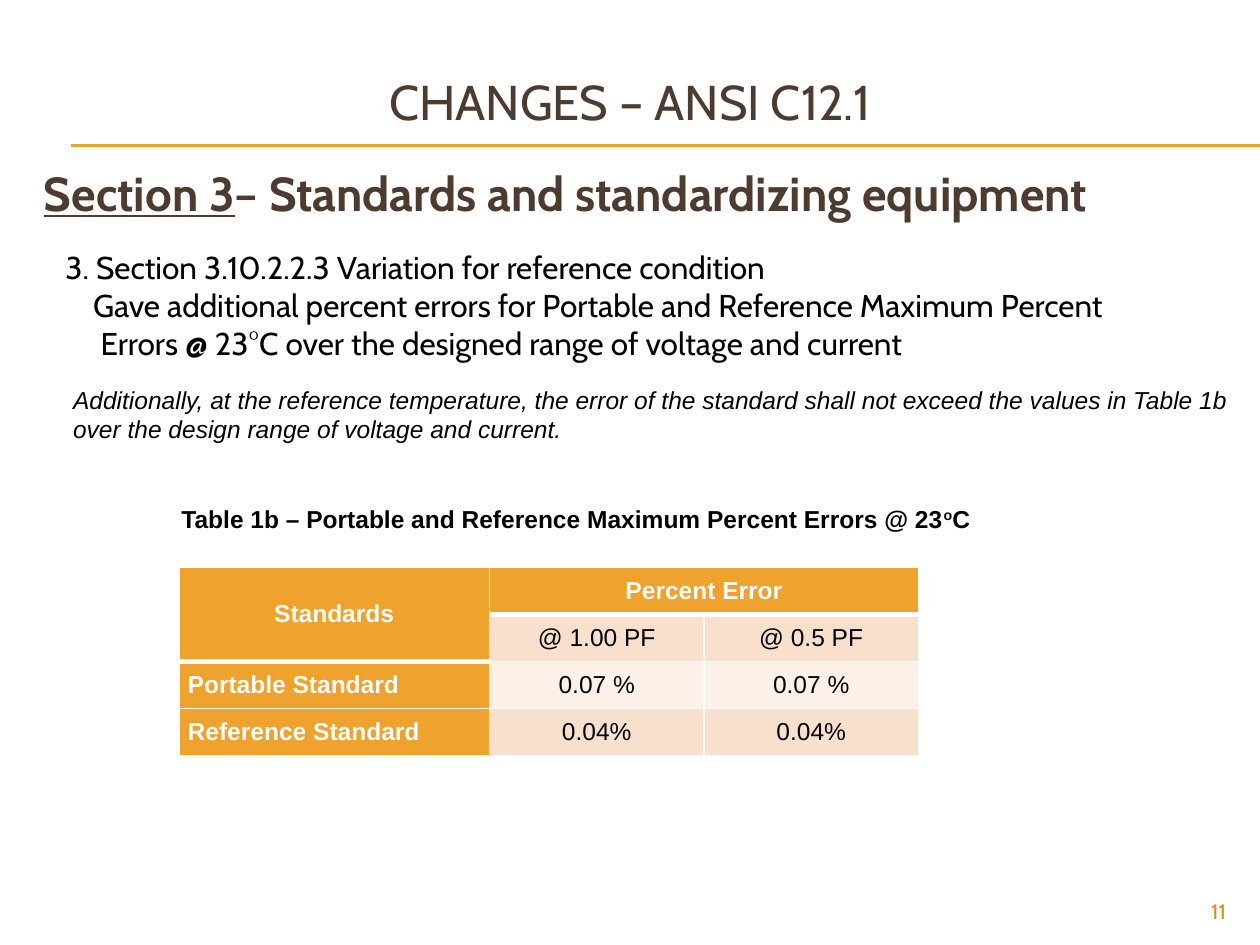
from dataclasses import dataclass
from lxml.etree import SubElement
from pptx import Presentation
from pptx.dml.color import RGBColor as RGB
from pptx.enum.shapes import MSO_CONNECTOR as Connector
from pptx.enum.text import MSO_ANCHOR as Anchor, PP_ALIGN as Align
from pptx.oxml.ns import qn
from pptx.util import Emu, Inches, Pt


@dataclass(frozen=True)
class Theme:
    """Colours, fonts and type sizes of the slide."""
    gold: str = "F0A22E"
    dark_gold: str = "D48F29"
    brown: str = "4E3B30"
    black: str = "000000"
    white: str = "FFFFFF"
    band: str = "F9E0CD"
    pale_band: str = "FCF0E8"
    heading_font: str = "Cabin"
    text_font: str = "Arial"
    title: float = 27.9
    section: float = 27.2
    change: float = 18
    detail: float = 14
    number: float = 12
    leading: float = 17


THEME = Theme()
WIDTH, HEIGHT = Inches(10), Inches(7.5)


@dataclass(frozen=True)
class Box:
    """A region in percent of the slide's width and height."""
    left: float
    top: float
    width: float
    height: float

    def lengths(self):
        """Return left, top, width and height as slide lengths."""
        shares = (self.left, self.top, self.width, self.height)
        return [Emu(round(share * side / 100))
                for share, side in zip(shares, (WIDTH, HEIGHT) * 2)]


def style(paragraph, size, color, font=THEME.heading_font, bold=False,
          italic=False, align=Align.LEFT):
    """Set the type and alignment of a paragraph."""
    face = paragraph.font
    face.name, face.size, face.bold, face.italic = font, Pt(size), bold, italic
    face.color.rgb = RGB.from_string(color)
    paragraph.alignment = align


def add_frame(slide, box, anchor=Anchor.TOP):
    """Add a wrapping text box and return its frame."""
    frame = slide.shapes.add_textbox(*box.lengths()).text_frame
    frame.word_wrap, frame.vertical_anchor = True, anchor
    return frame


def add_lines(frame, lines):
    """Fill a frame with (text, left indent in inches) and yield paragraphs."""
    for index, (text, indent) in enumerate(lines):
        paragraph = frame.add_paragraph() if index else frame.paragraphs[0]
        paragraph.text = text
        properties = paragraph._p.get_or_add_pPr()
        properties.set("marL", str(Inches(indent)))
        properties.set("indent", "0")
        yield paragraph


def add_title(slide, box):
    """Place the centred title."""
    frame = add_frame(slide, box, Anchor.MIDDLE)
    frame.margin_top = Inches(0.17)
    frame.text = "CHANGES – ANSI C12.1"
    style(frame.paragraphs[0], THEME.title, THEME.brown, align=Align.CENTER)


def add_rules(slide, box):
    """Draw the double rule along the top and bottom of the box."""
    left, top, width, height = box.lengths()
    for y in (top, top + height):
        rule = slide.shapes.add_connector(Connector.STRAIGHT, left, y, left + width, y)
        rule.line.color.rgb = RGB.from_string(THEME.gold)
        rule.line.width = Pt(0.75)
        SubElement(rule._element.spPr, qn("a:effectLst"))


def add_section(slide, box):
    """Place the section heading with its underlined number."""
    heading = add_frame(slide, box).paragraphs[0]
    style(heading, THEME.section, THEME.brown, bold=True)
    for text, underlined in (("Section 3", True),
                             ("– Standards and standardizing equipment", False)):
        run = heading.add_run()
        run.text, run.font.underline = text, underlined


def add_change(slide, box):
    """Place the description of the change."""
    lines = (
        ("3. Section 3.10.2.2.3 Variation for reference condition", 0),
        ("Gave additional percent errors for Portable and Reference Maximum Percent", 0.22),
        ("Errors @ 23°C over the designed range of voltage and current", 0.28),
    )
    for paragraph in add_lines(add_frame(slide, box), lines):
        style(paragraph, THEME.change, THEME.black)


def add_quote(slide, box):
    """Place the quoted rule and the table caption below it."""
    frame = add_frame(slide, box, Anchor.MIDDLE)
    frame.word_wrap = False
    frame.margin_left = frame.margin_right = frame.margin_top = frame.margin_bottom = 0
    lines = (
        ("Additionally, at the reference temperature, the error of the standard "
         "shall not exceed the values in Table 1b", 0),
        ("over the design range of voltage and current.", 0),
        ("Table 1b – Portable and Reference Maximum Percent Errors @ 23", 0.86),
    )
    *rule, caption = add_lines(frame, lines)
    for paragraph in rule:
        style(paragraph, THEME.detail, THEME.black, THEME.text_font, italic=True)
    style(caption, THEME.detail, THEME.black, THEME.text_font, bold=True)
    for paragraph in (*rule, caption):
        paragraph.line_spacing = Pt(THEME.leading)
    caption.space_before = Pt(2 * THEME.leading)
    degree, unit = caption.add_run(), caption.add_run()
    degree.text, unit.text = "o", "C"
    degree.font._element.set("baseline", "30000")


def set_borders(cell, bottom):
    """Give a cell white borders, with its own bottom width in points."""
    properties = cell._tc.get_or_add_tcPr()
    widths = {"lnL": 1, "lnR": 1, "lnT": 1, "lnB": bottom}
    for index, (side, width) in enumerate(widths.items()):
        line = SubElement(properties, qn(f"a:{side}"), w=str(Pt(width)))
        fill = SubElement(line, qn("a:solidFill"))
        SubElement(fill, qn("a:srgbClr"), val=THEME.white)
        properties.insert(index, line)


def add_errors(slide, box):
    """Place the table of percent errors."""
    rows = (
        ("Standards", "Percent Error", ""),
        ("", "@ 1.00 PF", "@ 0.5 PF"),
        ("Portable Standard", "0.07 %", "0.07 %"),
        ("Reference Standard", "0.04%", "0.04%"),
    )
    bands = (THEME.gold, THEME.band, THEME.pale_band, THEME.band)
    left, top, width, height = box.lengths()
    table = slide.shapes.add_table(len(rows), 3, left, top, width, height).table
    for column, share in zip(table.columns, (0.42, 0.29, 0.29)):
        column.width = Emu(round(width * share))
    for r, (row, band) in enumerate(zip(rows, bands)):
        for c, text in enumerate(row):
            cell = table.cell(r, c)
            heading = r == 0 or c == 0
            cell.text = text
            cell.vertical_anchor = Anchor.MIDDLE
            cell.margin_left = cell.margin_right = Inches(0.07)
            cell.margin_top = cell.margin_bottom = 0
            cell.fill.solid()
            cell.fill.fore_color.rgb = RGB.from_string(THEME.gold if heading else band)
            style(cell.text_frame.paragraphs[0], THEME.detail,
                  THEME.white if heading else THEME.black, THEME.text_font, bold=heading,
                  align=Align.JUSTIFY if c == 0 and r > 1 else Align.CENTER)
            set_borders(cell, 3 if r == 0 or (r, c) == (1, 0) else 1)
    table.cell(0, 0).merge(table.cell(1, 0))
    table.cell(0, 1).merge(table.cell(0, 2))


def add_number(slide, box):
    """Place the slide number."""
    frame = add_frame(slide, box)
    frame.text = "11"
    style(frame.paragraphs[0], THEME.number, THEME.dark_gold, align=Align.RIGHT)


def main():
    """Build the slide and save it."""
    deck = Presentation()
    deck.slide_width, deck.slide_height = WIDTH, HEIGHT
    slide = deck.slides.add_slide(deck.slide_layouts[6])
    add_rules(slide, Box(5.6, 15.33, 94.4, 0.13))
    add_section(slide, Box(2.5, 16.67, 87.5, 10.67))
    add_change(slide, Box(4.2, 25.6, 87.5, 13.47))
    add_errors(slide, Box(14.2, 60, 58.7, 20))
    add_quote(slide, Box(5.8, 40.67, 92.5, 15.73))
    add_number(slide, Box(90, 94.4, 8.3, 3.6))
    add_title(slide, Box(5, 4, 90, 11.73))
    deck.save("out.pptx")


if __name__ == "__main__":
    main()
